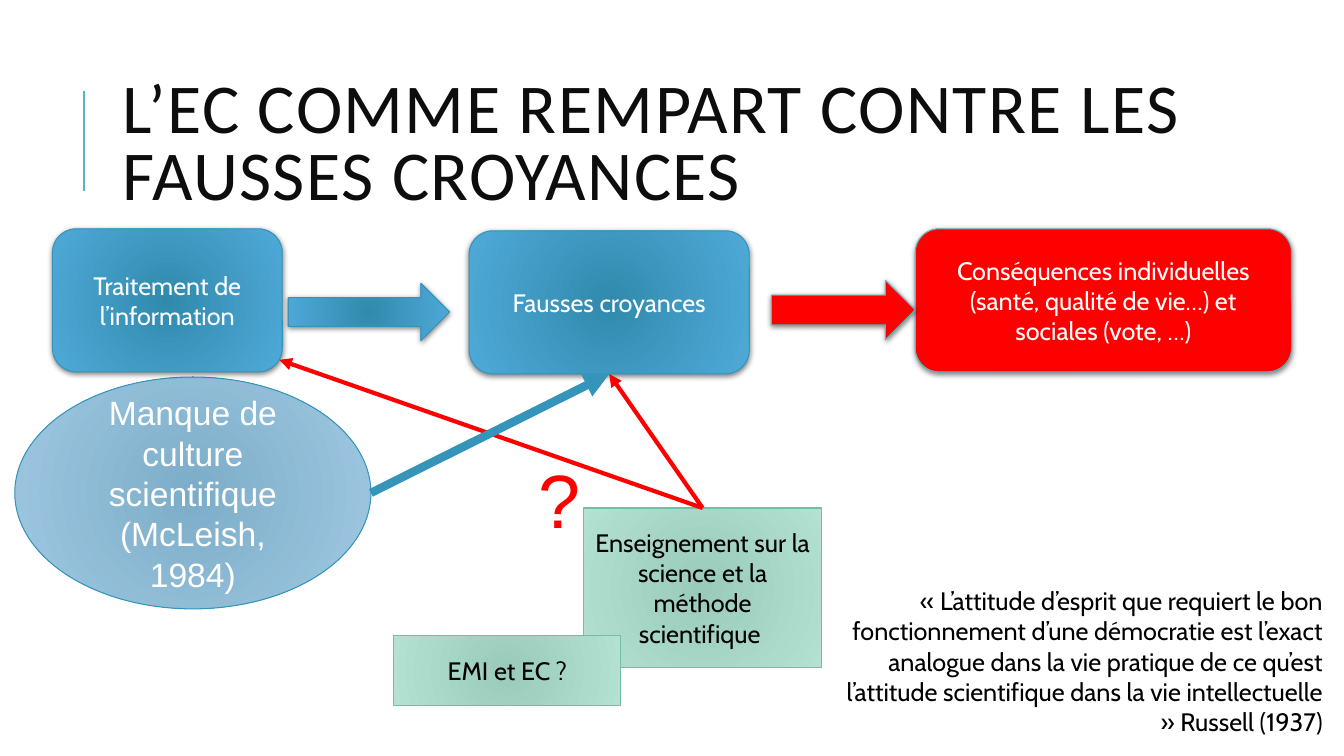
from dataclasses import dataclass
from typing import Any

from lxml import etree
from pptx import Presentation
from pptx.dml.color import RGBColor
from pptx.enum.shapes import MSO_CONNECTOR, MSO_SHAPE
from pptx.enum.text import MSO_ANCHOR, MSO_AUTO_SIZE, PP_ALIGN
from pptx.oxml.ns import qn
from pptx.util import Inches, Pt

RECT = MSO_SHAPE.RECTANGLE
ROUND = MSO_SHAPE.ROUNDED_RECTANGLE
OVAL = MSO_SHAPE.OVAL
ARROW = MSO_SHAPE.RIGHT_ARROW
STRAIGHT = MSO_CONNECTOR.STRAIGHT
LEFT, MID, RIGHT = PP_ALIGN.LEFT, PP_ALIGN.CENTER, PP_ALIGN.RIGHT
TOP, MIDDLE = MSO_ANCHOR.TOP, MSO_ANCHOR.MIDDLE
GROW, FIXED = MSO_AUTO_SIZE.SHAPE_TO_FIT_TEXT, MSO_AUTO_SIZE.NONE

WIDE, HIGH = Inches(13.333), Inches(7.5)


@dataclass(frozen=True)
class Theme:
    # Plain colours
    black: str = "000000"
    white: str = "FFFFFF"
    ink: str = "0D0D0D"
    red: str = "FF0000"
    blue: str = "3494BA"
    teal: str = "58B6C0"
    green: str = "75BDA7"
    # Gradients, from centre to edge
    deep: tuple[str, str] = ("308AAD", "50AAD9")
    pale: tuple[str, str] = ("7CADC8", "A1C9E3")
    mint: tuple[str, str] = ("99CABA", "B4E2D2")
    # Fonts and sizes
    head: str = "Calibri"
    body: str = "Cabin"
    plain: str = "Arial"
    title: int = 50
    mark: int = 54
    large: int = 24
    base: int = 18


T = Theme()


# Places are percentages of the slide's width and height
@dataclass(frozen=True)
class Words:
    paras: tuple[str, ...] = ()
    color: str = T.white
    size: int = T.base
    font: str = T.body
    align: PP_ALIGN = MID


@dataclass(frozen=True)
class Box:
    kind: MSO_SHAPE
    place: tuple[float, float, float, float]
    fill: str | tuple[str, str]
    edge: str
    words: Words = Words()
    shade: bool = False


@dataclass(frozen=True)
class Note:
    place: tuple[float, float, float, float]
    words: Words
    form: dict[str, Any]
    space: float = 1
    track: int = 0


@dataclass(frozen=True)
class Link:
    start: tuple[float, float]
    end: tuple[float, float]
    color: str
    width: float
    head: bool = True


TEACH = (52.28, 67.2)
BELIEF = (45.33, 49.47)

PARTS: list[Box | Note | Link] = [
    # Heading
    Link((6.25, 25.33), (6.25, 12), T.teal, 1.5, head=False),
    Note((8.4, 8.53, 90.75, 21.87),
         Words(("L’EC COMME REMPART CONTRE LES FAUSSES CROYANCES",),
               T.ink, T.title, T.head, LEFT),
         {"vertical_anchor": MIDDLE, "word_wrap": True, "auto_size": FIXED},
         space=0.8, track=100),
    # Teaching, culture and the question mark
    Box(RECT, (43.43, 67.2, 17.7, 21.07), T.mint, T.green,
        Words(("Enseignement sur la science et la méthode scientifique ",),
              T.black)),
    Box(OVAL, (1.1, 49.87, 26.5, 30.67), T.pale, T.blue,
        Words(("Manque de culture scientifique", "(McLeish, 1984)"),
              size=T.large, font=T.plain)),
    Note((39.3, 59.2, 4.65, 13.47),
         Words(("?",), T.red, T.mark, T.plain),
         {"vertical_anchor": TOP, "word_wrap": False, "auto_size": GROW}),
    # Main chain
    Box(ROUND, (3.9, 30.27, 17.1, 18.93), T.deep, T.blue,
        Words(("Traitement de l’information",)), True),
    Box(ROUND, (34.9, 30.53, 20.85, 18.93), T.deep, T.blue,
        Words(("Fausses croyances",)), True),
    Box(ARROW, (21.45, 37.47, 12, 7.6), T.deep, T.blue, shade=True),
    Box(ROUND, (68.1, 30.27, 28, 18.93), T.red, T.teal,
        Words(("Conséquences individuelles (santé, qualité de vie…) "
               "et sociales (vote, …)",)), True),
    Box(ARROW, (57.4, 37.07, 10.7, 7.87), T.red, T.teal, shade=True),
    # Links
    Link(TEACH, (20.78, 47.6), T.red, 3),
    Link(TEACH, BELIEF, T.red, 3),
    Link((27.6, 65.2), BELIEF, T.blue, 6),
    # Foot
    Box(RECT, (29.3, 84, 16.9, 9.33), T.mint, T.green,
        Words(("EMI et EC ?",), T.black)),
    Note((61.7, 76.8, 37.45, 21.6),
         Words(("« L’attitude d’esprit que requiert le bon fonctionnement "
                "d’une démocratie est l’exact analogue dans la vie pratique "
                "de ce qu’est l’attitude scientifique dans la vie "
                "intellectuelle » Russell (1937)",), T.black, align=RIGHT),
         {"vertical_anchor": TOP, "word_wrap": True, "auto_size": GROW}),
]


def scale(nums: tuple[float, ...]) -> list[int]:
    return [round(num / 100 * (HIGH if i % 2 else WIDE))
            for i, num in enumerate(nums)]


def apply(target: Any, form: dict[str, Any]) -> None:
    for key, value in form.items():
        setattr(target, key, value)


def add(parent: Any, tag: str, **attrs: str) -> Any:
    return etree.SubElement(parent, qn(tag), attrs)


def write(frame: Any, words: Words, space: float = 1, track: int = 0) -> None:
    for i, text in enumerate(words.paras):
        para = frame.add_paragraph() if i else frame.paragraphs[0]
        apply(para, {"alignment": words.align, "line_spacing": space})
        run = para.add_run()
        run.text = text
        apply(run.font, {"size": Pt(words.size), "name": words.font})
        run.font.color.rgb = RGBColor.from_string(words.color)
        if track:
            run.font._element.set("spc", str(track))


def paint(shape: Any, fill: str | tuple[str, str]) -> None:
    if isinstance(fill, str):
        shape.fill.solid()
        shape.fill.fore_color.rgb = RGBColor.from_string(fill)
        return
    shape.fill.gradient()
    for stop, color in zip(shape.fill.gradient_stops, fill):
        stop.color.rgb = RGBColor.from_string(color)
    grad = shape._element.spPr.find(qn("a:gradFill"))
    grad.remove(grad.find(qn("a:lin")))
    ring = add(grad, "a:path", path="circle")
    add(ring, "a:fillToRect", **dict.fromkeys("ltrb", "100000"))


def stroke(line: Any, color: str, width: float) -> None:
    line.color.rgb = RGBColor.from_string(color)
    line.width = Pt(width)


def draw_box(shapes: Any, box: Box) -> None:
    shape = shapes.add_shape(box.kind, *scale(box.place))
    paint(shape, box.fill)
    stroke(shape.line, box.edge, 0.75)
    shape.shadow.inherit = False
    if box.shade:
        effect = shape._element.spPr.find(qn("a:effectLst"))
        cast = add(effect, "a:outerShdw", blurRad=str(Pt(4)),
                   dist=str(Pt(1)), dir="5400000", rotWithShape="0")
        add(add(cast, "a:srgbClr", val=T.black), "a:alpha", val="50000")
    apply(shape.text_frame, {"vertical_anchor": MIDDLE, "word_wrap": True})
    write(shape.text_frame, box.words)


def draw_note(shapes: Any, note: Note) -> None:
    frame = shapes.add_textbox(*scale(note.place)).text_frame
    apply(frame, note.form)
    write(frame, note.words, note.space, note.track)


def draw_link(shapes: Any, link: Link) -> None:
    line = shapes.add_connector(STRAIGHT, *scale(link.start + link.end))
    stroke(line.line, link.color, link.width)
    if link.head:
        add(line.line._get_or_add_ln(), "a:tailEnd", type="triangle")
    add(line._element.spPr, "a:effectLst")


def main() -> None:
    deck = Presentation()
    apply(deck, {"slide_width": WIDE, "slide_height": HIGH})
    slide = deck.slides.add_slide(deck.slide_layouts[6])
    draw = {Box: draw_box, Note: draw_note, Link: draw_link}
    for part in PARTS:
        draw[type(part)](slide.shapes, part)
    deck.save("out.pptx")


if __name__ == "__main__":
    main()
